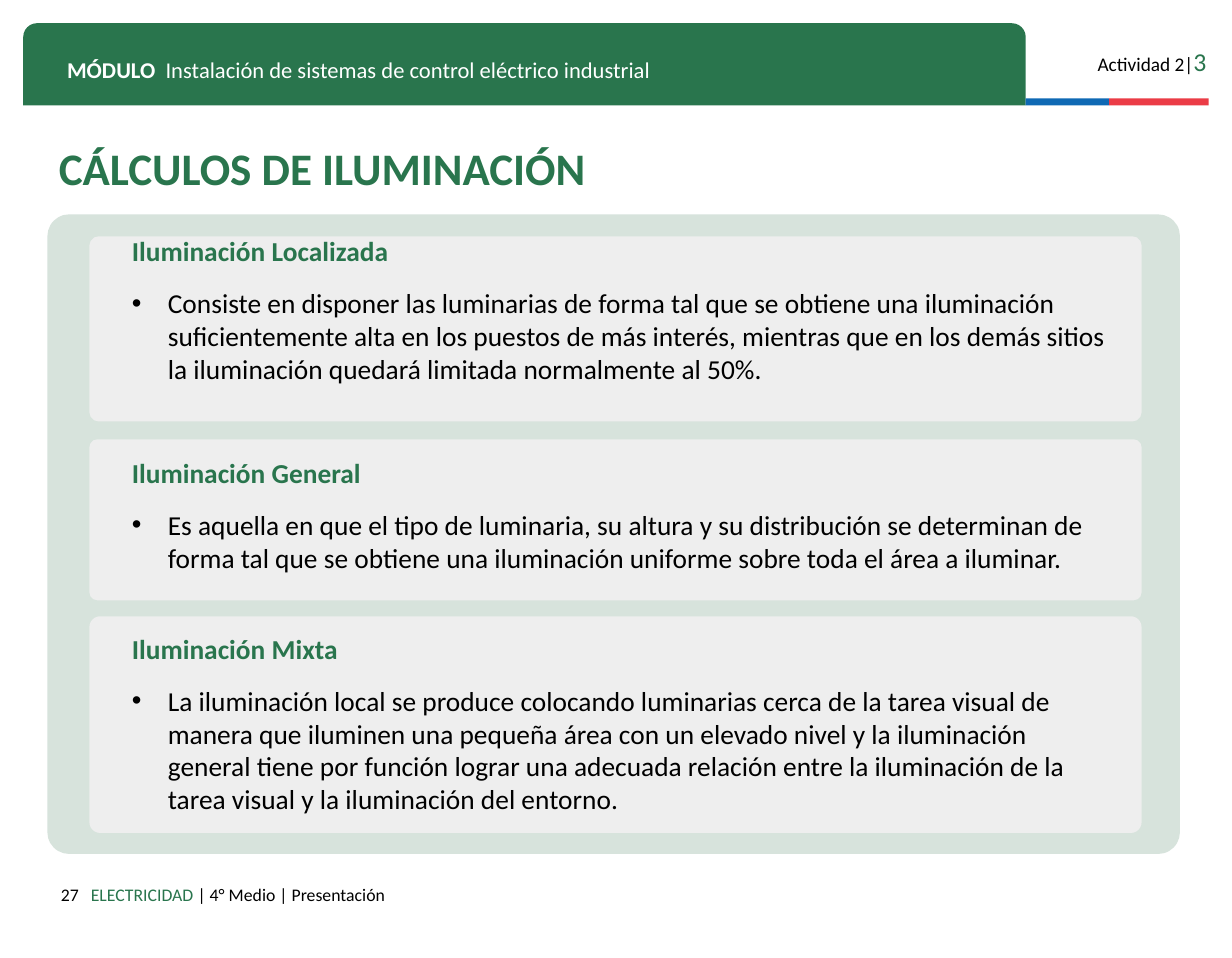
import pptx
import pptx.dml.color
import pptx.enum.shapes
import pptx.enum.text
import pptx.oxml
import pptx.oxml.ns
import pptx.util
from pptx.util import Cm

GREEN = "29754D"
BLACK = "000000"
WHITE = "FFFFFF"
FONT = "Calibri"
SHAPES = pptx.enum.shapes.MSO_SHAPE
RIGHT = pptx.enum.text.PP_ALIGN.RIGHT
MIDDLE = pptx.enum.text.MSO_ANCHOR.MIDDLE

# Card top and height, text top, width and height in cm, then heading and body
CARDS = [
    (5.18, 4.06, 5.0, 22.38, 4.01, "Iluminación Localizada",
     "Consiste en disponer las luminarias de forma tal que se obtiene una "
     "iluminación suficientemente alta en los puestos de más interés, mientras "
     "que en los demás sitios la iluminación quedará limitada normalmente al 50%."),
    (9.63, 3.53, 9.86, 22.78, 2.87, "Iluminación General",
     "Es aquella en que el tipo de luminaria, su altura y su distribución se "
     "determinan de forma tal que se obtiene una iluminación uniforme sobre toda "
     "el área a iluminar."),
    (13.51, 4.75, 13.72, 21.97, 4.32, "Iluminación Mixta",
     "La iluminación local se produce colocando luminarias cerca de la tarea "
     "visual de manera que iluminen una pequeña área con un elevado nivel y la "
     "iluminación general tiene por función lograr una adecuada relación entre la "
     "iluminación de la tarea visual y la iluminación del entorno."),
]


def color(hex_string):
    return pptx.dml.color.RGBColor.from_string(hex_string)


def add_block(slide, kind, left, top, width, height, fill, adjustments=()):
    shape = slide.shapes.add_shape(kind, Cm(left), Cm(top), Cm(width), Cm(height))
    shape.shadow.inherit = False
    shape.fill.solid()
    shape.fill.fore_color.rgb = color(fill)
    shape.line.fill.background()
    for index, value in enumerate(adjustments):
        shape.adjustments[index] = value


def add_text_frame(slide, left, top, width, height, vertical_inset=0.25):
    box = slide.shapes.add_textbox(Cm(left), Cm(top), Cm(width), Cm(height))
    frame = box.text_frame
    frame.word_wrap = True
    frame.margin_left = frame.margin_right = Cm(0.25)
    frame.margin_top = frame.margin_bottom = Cm(vertical_inset)
    return frame


def add_run(paragraph, text, size, text_color, bold=False):
    run = paragraph.add_run()
    run.text = text
    run.font.name = FONT
    run.font.size = pptx.util.Pt(size)
    run.font.bold = bold
    run.font.color.rgb = color(text_color)


def add_label(slide, left, top, width, height, runs, alignment=None):
    """Add a one-paragraph text; each run is (text, size, colour[, bold])."""
    frame = add_text_frame(slide, left, top, width, height)
    paragraph = frame.paragraphs[0]
    paragraph.alignment = alignment
    for run in runs:
        add_run(paragraph, *run)
    return frame


def set_bullet(paragraph, indent):
    properties = paragraph._p.get_or_add_pPr()
    properties.set("marL", str(Cm(indent)))
    properties.set("indent", str(-Cm(indent)))
    namespace = pptx.oxml.ns.nsdecls("a")
    for xml in (
        f'<a:buClr {namespace}><a:srgbClr val="{BLACK}"/></a:buClr>',
        f'<a:buFont {namespace} typeface="Arial"/>',
        f'<a:buChar {namespace} char="•"/>',
    ):
        properties.append(pptx.oxml.parse_xml(xml))


def add_card(slide, top, height, text_top, text_width, text_height, heading, body):
    add_block(slide, SHAPES.ROUNDED_RECTANGLE, 1.96, top, 23.06, height, "EEEEEE", [0.05])
    frame = add_text_frame(slide, 2.64, text_top, text_width, text_height, 0.13)
    add_run(frame.paragraphs[0], heading, 17, GREEN, True)
    paragraph = frame.add_paragraph()
    paragraph.space_before = pptx.util.Pt(12)
    set_bullet(paragraph, 0.79)
    add_run(paragraph, body, 17, BLACK)


def add_header(slide):
    add_block(slide, SHAPES.ROUND_2_SAME_RECTANGLE, 0.51, 0.51, 21.97, 1.8, GREEN, [0.167, 0])
    add_block(slide, SHAPES.RECTANGLE, 22.48, 2.16, 1.83, 0.15, "0F69B4")
    add_block(slide, SHAPES.RECTANGLE, 24.31, 2.16, 2.18, 0.15, "EB3C46")
    add_label(slide, 23.44, 0.76, 3.25, 0.97,
              [("Actividad 2|", 12, BLACK), ("3", 16, GREEN)], RIGHT)
    add_label(slide, 1.22, 0.97, 2.6, 0.89, [("MÓDULO", 14, WHITE, True)])
    add_label(slide, 3.38, 0.97, 18.5, 0.89,
              [("Instalación de sistemas de control eléctrico industrial", 14, WHITE)])


def add_footer(slide):
    add_label(slide, 0.51, 19.13, 1.47, 0.74, [("27", 11, BLACK)], RIGHT)
    add_label(slide, 1.74, 19.13, 18.15, 0.97,
              [("ELECTRICIDAD ", 11, GREEN), ("| 4° Medio | Presentación", 11, BLACK)])


def main():
    presentation = pptx.Presentation()
    presentation.slide_width = Cm(27)
    presentation.slide_height = Cm(21)
    slide = presentation.slides.add_slide(presentation.slide_layouts[6])

    add_header(slide)
    add_footer(slide)
    title = add_label(slide, 1.04, 3.28, 22.15, 0.99,
                      [("CÁLCULOS DE ILUMINACIÓN", 28, GREEN, True)])
    title.vertical_anchor = MIDDLE
    title.paragraphs[0].line_spacing = 0.8

    add_block(slide, SHAPES.ROUNDED_RECTANGLE, 1.04, 4.7, 24.82, 14.02, "D7E3DC", [0.034])
    for card in CARDS:
        add_card(slide, *card)

    presentation.save("out.pptx")


if __name__ == "__main__":
    main()
